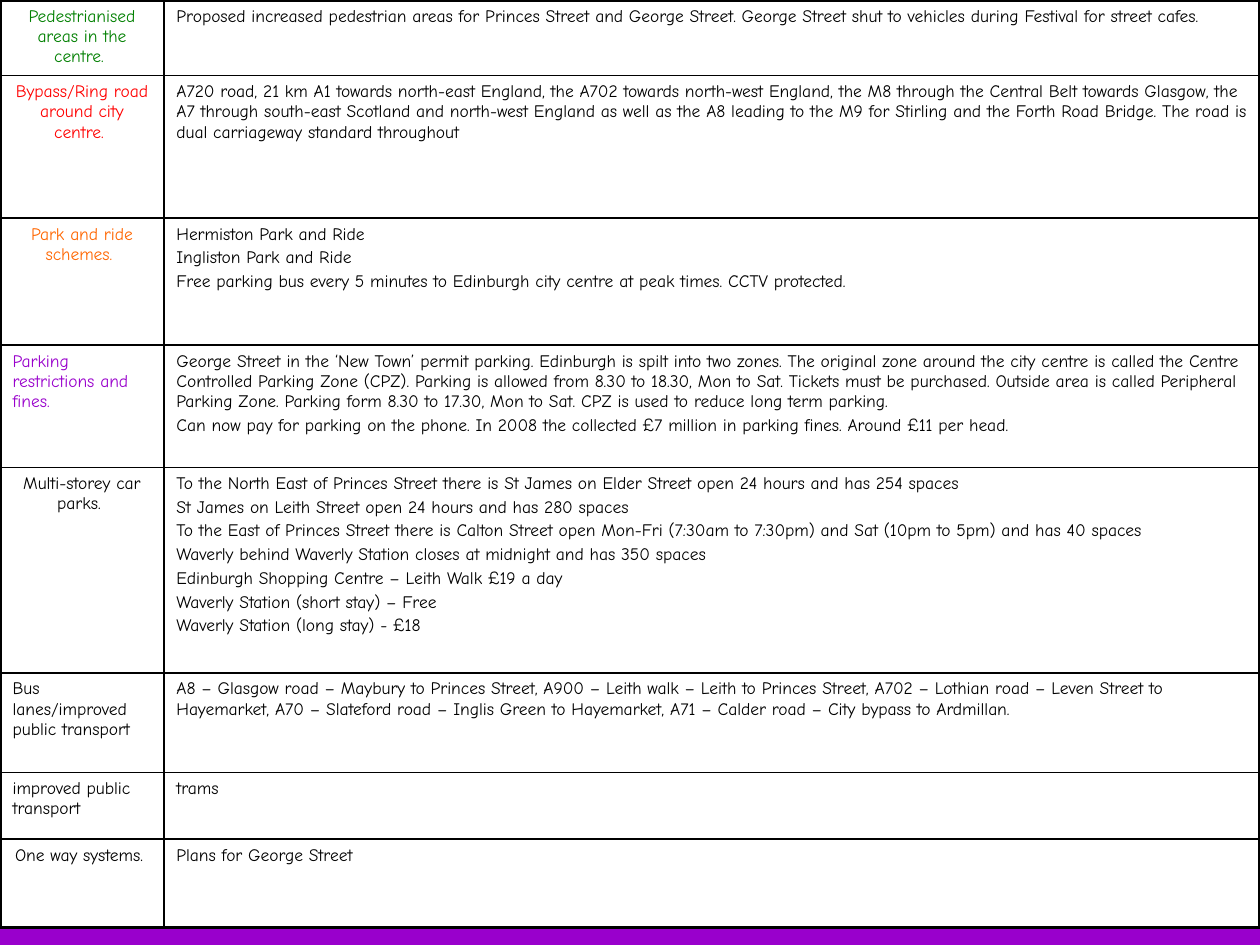
from lxml import etree
from pptx import Presentation
from pptx.dml.color import RGBColor
from pptx.enum import text
from pptx.oxml import ns
from pptx.util import Inches, Pt

PURPLE = RGBColor(0x99, 0x00, 0xCC)
GREEN = RGBColor(0x00, 0x80, 0x00)
RED = RGBColor(0xFF, 0x00, 0x00)
ORANGE = RGBColor(0xFF, 0x66, 0x00)
BLACK = RGBColor(0x00, 0x00, 0x00)
WHITE = RGBColor(0xFF, 0xFF, 0xFF)

COL_WIDTHS = [1.3, 8.7]
THIN, THICK = 1, 2.25

# Row height, topic, topic colour, topic centred, notes
ROWS = [
    (0.6, "Pedestrianised areas in the centre. ", GREEN, True, [
        "Proposed increased pedestrian areas for Princes Street and George Street. "
        "George Street shut to vehicles during Festival for street cafes."]),
    (1.13, "Bypass/Ring road around city centre. ", RED, True, [
        "A720 road, 21 km A1 towards north-east England, the A702 towards north-west "
        "England, the M8 through the Central Belt towards Glasgow, the A7 through "
        "south-east Scotland and north-west England as well as the A8 leading to the M9 "
        "for Stirling and the Forth Road Bridge. The road is dual carriageway standard "
        "throughout"]),
    (1.01, "Park and ride schemes. ", ORANGE, True, [
        "Hermiston Park and Ride",
        "Ingliston Park and Ride",
        "Free parking bus every 5 minutes to Edinburgh city centre at peak times. "
        "CCTV protected."]),
    (0.97, "Parking restrictions and fines.", PURPLE, False, [
        "George Street in the ‘New Town’ permit parking. Edinburgh is spilt into two "
        "zones. The original zone around the city centre is called the Centre Controlled "
        "Parking Zone (CPZ). Parking is allowed from 8.30 to 18.30, Mon to Sat. Tickets "
        "must be purchased. Outside area is called Peripheral Parking Zone. Parking form "
        "8.30 to 17.30, Mon to Sat. CPZ is used to reduce long term parking.",
        "Can now pay for parking on the phone. In 2008 the collected £7 million in "
        "parking fines. Around £11 per head."]),
    (1.63, "Multi-storey car parks. ", BLACK, True, [
        "To the North East of Princes Street there is St James on Elder Street open "
        "24 hours and has 254 spaces",
        "St James on Leith Street open 24 hours and has 280 spaces",
        "To the East of Princes Street there is Calton Street open Mon-Fri (7:30am to "
        "7:30pm) and Sat (10pm to 5pm) and has 40 spaces",
        "Waverly behind Waverly Station closes at midnight and has 350 spaces",
        "Edinburgh Shopping Centre – Leith Walk £19 a day",
        "Waverly Station (short stay) – Free",
        "Waverly Station (long stay) - £18"]),
    (0.79, "Bus lanes/improved public transport", BLACK, False, [
        "A8 – Glasgow road – Maybury to Princes Street, A900 – Leith walk – Leith to "
        "Princes Street, A702 – Lothian road – Leven Street to Hayemarket, A70 – "
        "Slateford road – Inglis Green to Hayemarket, A71 – Calder road – City bypass to "
        "Ardmillan."]),
    (0.53, "improved public transport", BLACK, False, ["trams"]),
    (0.7, "One way systems. ", BLACK, True, ["Plans for George Street"]),
]


class SlideBuilder:
    font = "Comic Neue"
    size = Pt(10)

    def __init__(self, slide):
        self.slide = slide

    def background(self, color):
        fill = self.slide.background.fill
        fill.solid()
        fill.fore_color.rgb = color

    def table(self, rows, col_widths):
        heights = [row[0] for row in rows]
        frame = self.slide.shapes.add_table(
            len(rows), len(col_widths), 0, 0,
            Inches(sum(col_widths)), Inches(sum(heights)))
        table = frame.table
        for column, width in zip(table.columns, col_widths):
            column.width = Inches(width)
        last = len(rows) - 1
        for i, (height, topic, color, centred, notes) in enumerate(rows):
            table.rows[i].height = Inches(height)
            top = THICK if i == 0 else THIN
            bottom = THICK if i == last else THIN
            topic_cell, notes_cell = table.cell(i, 0), table.cell(i, 1)
            self.cell(topic_cell, [topic], color, centred)
            self.borders(topic_cell, THICK, THIN, top, bottom)
            self.cell(notes_cell, notes, BLACK)
            self.borders(notes_cell, THIN, THICK, top, bottom)

    def cell(self, cell, lines, color, centred=False):
        cell.margin_left = cell.margin_right = Inches(0.1)
        cell.margin_top = cell.margin_bottom = Inches(0.05)
        cell.fill.solid()
        cell.fill.fore_color.rgb = WHITE
        tf = cell.text_frame
        tf.text = "\n".join(lines)
        for p in tf.paragraphs:
            p.font.name = self.font
            p.font.size = self.size
            p.font.color.rgb = color
            if centred:
                p.alignment = text.PP_ALIGN.CENTER
            else:
                p.space_before = Pt(2)

    def borders(self, cell, left, right, top, bottom):
        """Draw black borders of the given point widths."""
        props = cell._tc.get_or_add_tcPr()
        sides = {"a:lnL": left, "a:lnR": right, "a:lnT": top, "a:lnB": bottom}
        for i, (tag, width) in enumerate(sides.items()):
            line = etree.Element(ns.qn(tag), w=str(Pt(width)))
            fill = etree.SubElement(line, ns.qn("a:solidFill"))
            etree.SubElement(fill, ns.qn("a:srgbClr"), val=str(BLACK))
            props.insert(i, line)  # borders must precede the cell fill


def main():
    prs = Presentation()
    prs.slide_width, prs.slide_height = Inches(10), Inches(7.5)
    builder = SlideBuilder(prs.slides.add_slide(prs.slide_layouts[6]))
    builder.background(PURPLE)
    builder.table(ROWS, COL_WIDTHS)
    prs.save("out.pptx")


if __name__ == "__main__":
    main()
